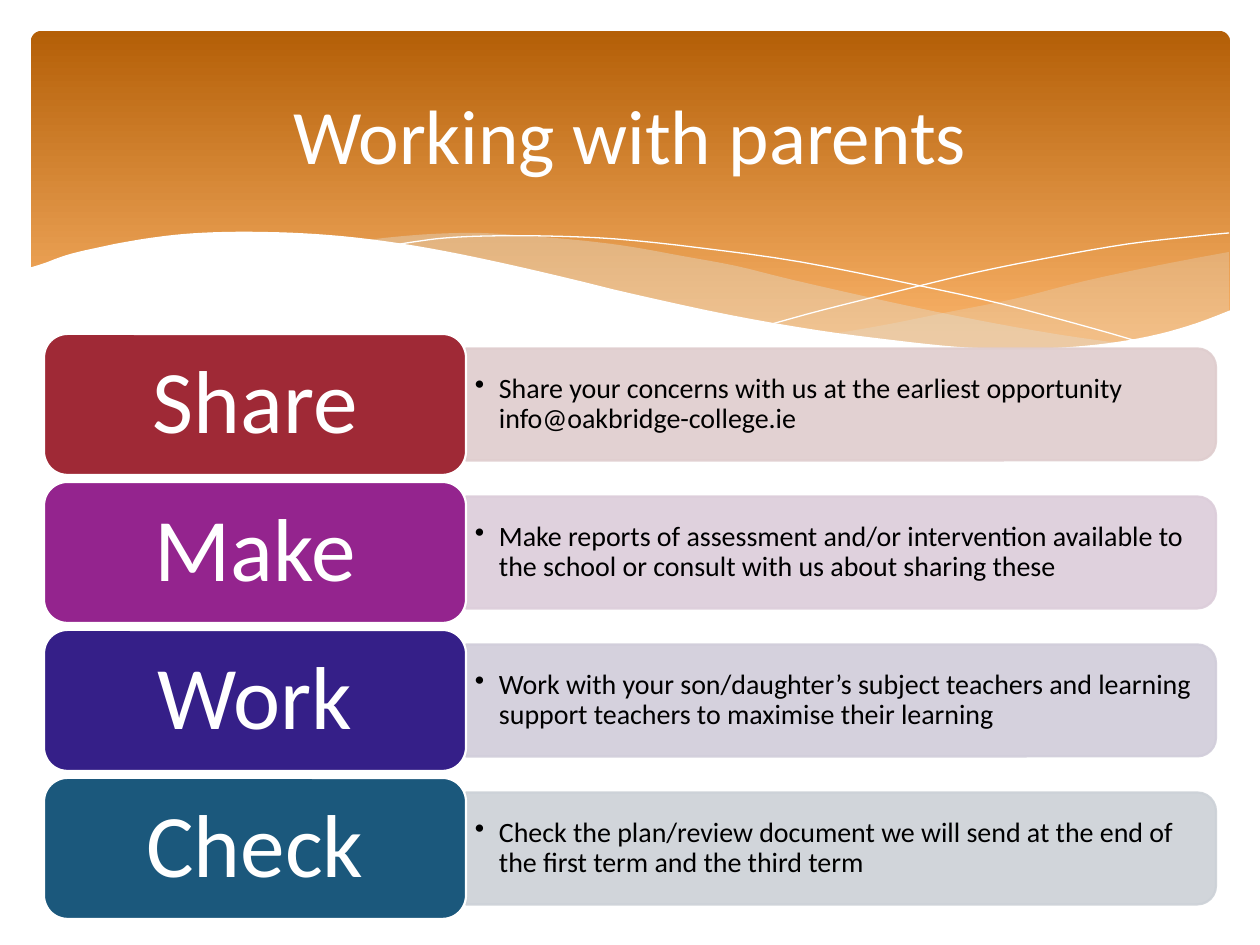
"""Build the "Working with parents" slide: a waved banner above four labelled actions."""
from dataclasses import dataclass

from lxml import etree
from pptx import Presentation
from pptx import util as u
from pptx.dml.color import RGBColor
from pptx.enum import shapes, text
from pptx.oxml.ns import qn

PX = 914400 / 126
SHAPE = shapes.MSO_SHAPE


@dataclass(frozen=True)
class Theme:
    font: str = "Calibri"
    white: str = "FFFFFF"
    black: str = "000000"
    wave: str = "E3DED1"
    banner: tuple = (("B45F07", 0), ("F9B268", 0.9))
    title_size: int = 44
    label_size: int = 51
    body_size: int = 16
    border: float = 1.25


THEME = Theme()
TITLE = "Working with parents"
ACTIONS = [
    ("Share", "9F2936", "DFCDCE",
     "Share your concerns with us at the earliest opportunity info@oakbridge-college.ie"),
    ("Make", "94248E", "DCCDDA",
     "Make reports of assessment and/or intervention available to the school "
     "or consult with us about sharing these"),
    ("Work", "351F88", "D1CDDA",
     "Work with your son/daughter’s subject teachers and learning support "
     "teachers to maximise their learning"),
    ("Check", "1B587C", "CCD1D7",
     "Check the plan/review document we will send at the end of the first term "
     "and the third term"),
]

RIGHT_WAVE = [
    [(1229, 252), (1160, 265), (1085, 281), (1014, 299), (949, 312), (890, 324), (833, 334)],
    [(833, 334), (888, 342), (939, 347), (984, 349), (1026, 350), (1064, 348), (1098, 345),
     (1130, 340), (1160, 334), (1187, 327), (1213, 318), (1229, 311)],
]
MIDDLE_WAVE = [
    [(1125, 344), (1055, 334), (977, 320), (890, 302), (793, 280), (736, 266), (682, 256),
     (632, 247), (586, 241), (529, 236), (479, 233), (433, 234), (394, 237), (360, 241)],
    [(360, 241), (407, 247), (456, 256), (509, 266), (566, 280), (619, 292), (713, 312),
     (779, 325), (838, 335), (893, 343), (942, 348), (989, 350), (1031, 350), (1068, 349),
     (1104, 346), (1125, 344)],
]
FALLING_LINE = [
    [(389, 246), (413, 242), (445, 238), (487, 236), (546, 236), (616, 239), (701, 248),
     (801, 262), (916, 285), (1002, 304), (1095, 329), (1143, 343)],
]
RISING_LINE = [
    [(772, 324), (823, 310), (907, 289), (978, 272), (1053, 257), (1128, 244), (1198, 236),
     (1229, 233)],
]
BANNER_EDGE = [
    [(1231, 310), (1197, 323), (1159, 334), (1117, 342), (1071, 347), (1019, 349), (959, 347),
     (892, 340), (816, 330), (730, 315), (633, 294), (563, 277), (493, 261), (428, 248),
     (368, 239), (315, 234), (266, 232), (223, 232), (184, 234), (150, 238), (120, 243),
     (96, 248), (74, 253), (58, 258), (45, 263), (29, 268)],
    [(29, 414), (1231, 414)],
]
CURVES = [
    (RIGHT_WAVE, dict(fill=THEME.wave, fill_alpha=29)),
    (MIDDLE_WAVE, dict(fill=THEME.wave, fill_alpha=40)),
    (FALLING_LINE, dict(line=THEME.white, width=0)),
    (RISING_LINE, dict(line=THEME.white, width=0)),
    (BANNER_EDGE, dict(fill=THEME.white)),
]

CARD_LEFT, CARD_TOP, CARD_WIDTH, CARD_HEIGHT, PITCH = 44, 334, 422, 141, 148
PANEL_WIDTH, PANEL_HEIGHT = 750, 112
BODY_WIDTH, BODY_HEIGHT = 745, 102


def emu(*lengths):
    return [round(length * PX) for length in lengths]


def set_alpha(fill, percent):
    color = fill._xPr.find(".//" + qn("a:srgbClr"))
    etree.SubElement(color, qn("a:alpha"), val=str(percent * 1000))


def paint(shape, fill=None, fill_alpha=100, line=None, width=THEME.border, line_alpha=100):
    shape.shadow.inherit = False
    for target, color, alpha in ((shape.fill, fill, fill_alpha),
                                 (shape.line.fill, line, line_alpha)):
        if color is None:
            target.background()
            continue
        target.solid()
        target.fore_color.rgb = RGBColor.from_string(color)
        if alpha < 100:
            set_alpha(target, alpha)
    if line:
        shape.line.width = u.Pt(width)


def write(shape, wording, size, color, align, spacing=1.0, insets=(13, 6)):
    frame = shape.text_frame
    across, down = emu(*insets)
    frame_format = dict(word_wrap=True, vertical_anchor=text.MSO_ANCHOR.MIDDLE,
                        margin_left=across, margin_right=across,
                        margin_top=down, margin_bottom=down)
    for name, value in frame_format.items():
        setattr(frame, name, value)
    para = frame.paragraphs[0]
    para.alignment, para.line_spacing = align, spacing
    span = para.add_run()
    span.text = wording
    for name, value in dict(name=THEME.font, size=u.Pt(size)).items():
        setattr(span.font, name, value)
    span.font.color.rgb = RGBColor.from_string(color)
    return para


def add_bullet(para, indent):
    properties = para._p.get_or_add_pPr()
    properties.set("marL", str(indent))
    properties.set("indent", str(-indent))
    etree.SubElement(properties, qn("a:buChar"), char="•")


def smooth(points, steps=4):
    if len(points) < 3:
        return points
    padded = [points[0], *points, points[-1]]
    curve = [points[0]]
    for a, b, c, d in zip(padded, padded[1:], padded[2:], padded[3:]):
        for t in (step / steps for step in range(1, steps + 1)):
            curve.append(tuple(
                (2 * q + (r - p) * t + (2 * p - 5 * q + 4 * r - s) * t ** 2
                 + (3 * q - p - 3 * r + s) * t ** 3) / 2
                for p, q, r, s in zip(a, b, c, d)))
    return curve


def add_curve(page, strands, style):
    points = [emu(*point) for strand in strands for point in smooth(strand)]
    builder = page.shapes.build_freeform(*points[0])
    builder.add_line_segments(points[1:], close="fill" in style)
    paint(builder.convert_to_shape(), **style)


def add_banner(page):
    banner = page.shapes.add_shape(SHAPE.ROUNDED_RECTANGLE, *emu(31, 31, 1199, 340))
    paint(banner)
    banner.adjustments[0] = 0.03
    banner.fill.gradient()
    banner.fill.gradient_angle = 270
    for stop, (color, position) in zip(banner.fill.gradient_stops, THEME.banner):
        stop.color.rgb = RGBColor.from_string(color)
        stop.position = position
    for strands, style in CURVES:
        add_curve(page, strands, style)
    title = page.shapes.add_textbox(*emu(63, 47, 1134, 173))
    write(title, TITLE, THEME.title_size, THEME.white, text.PP_ALIGN.CENTER)


def add_action(page, row, label, card_color, panel_color, wording):
    top = CARD_TOP + row * PITCH
    middle = top + CARD_HEIGHT / 2
    panel_left = CARD_LEFT + CARD_WIDTH
    panel = page.shapes.add_shape(SHAPE.ROUND_2_SAME_RECTANGLE, *emu(
        panel_left + (PANEL_WIDTH - PANEL_HEIGHT) / 2, middle - PANEL_WIDTH / 2,
        PANEL_HEIGHT, PANEL_WIDTH))
    panel.rotation = 90
    paint(panel, fill=panel_color, fill_alpha=90, line=panel_color, line_alpha=90)
    body = page.shapes.add_textbox(
        *emu(panel_left, middle - BODY_HEIGHT / 2, BODY_WIDTH, BODY_HEIGHT))
    para = write(body, wording, THEME.body_size, THEME.black, text.PP_ALIGN.LEFT, 0.9, (9, 4))
    add_bullet(para, *emu(24))
    card = page.shapes.add_shape(
        SHAPE.ROUNDED_RECTANGLE, *emu(CARD_LEFT, top, CARD_WIDTH, CARD_HEIGHT))
    paint(card, fill=card_color, line=THEME.white)
    write(card, label, THEME.label_size, THEME.white, text.PP_ALIGN.CENTER, 0.9, (26, 14))


def main():
    deck = Presentation()
    deck.slide_width, deck.slide_height = emu(1260, 945)
    page = deck.slides.add_slide(deck.slide_layouts[6])
    add_banner(page)
    for row, action in enumerate(ACTIONS):
        add_action(page, row, *action)
    deck.save("out.pptx")


if __name__ == "__main__":
    main()
